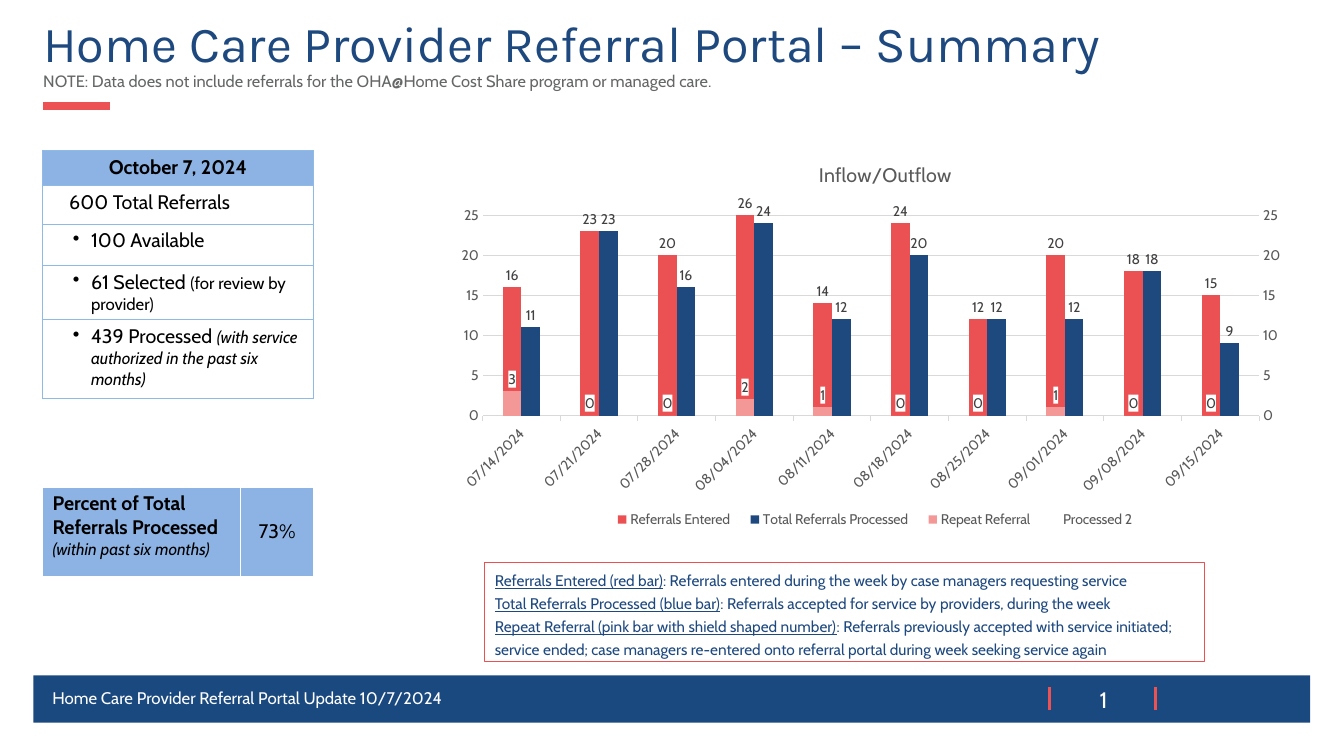
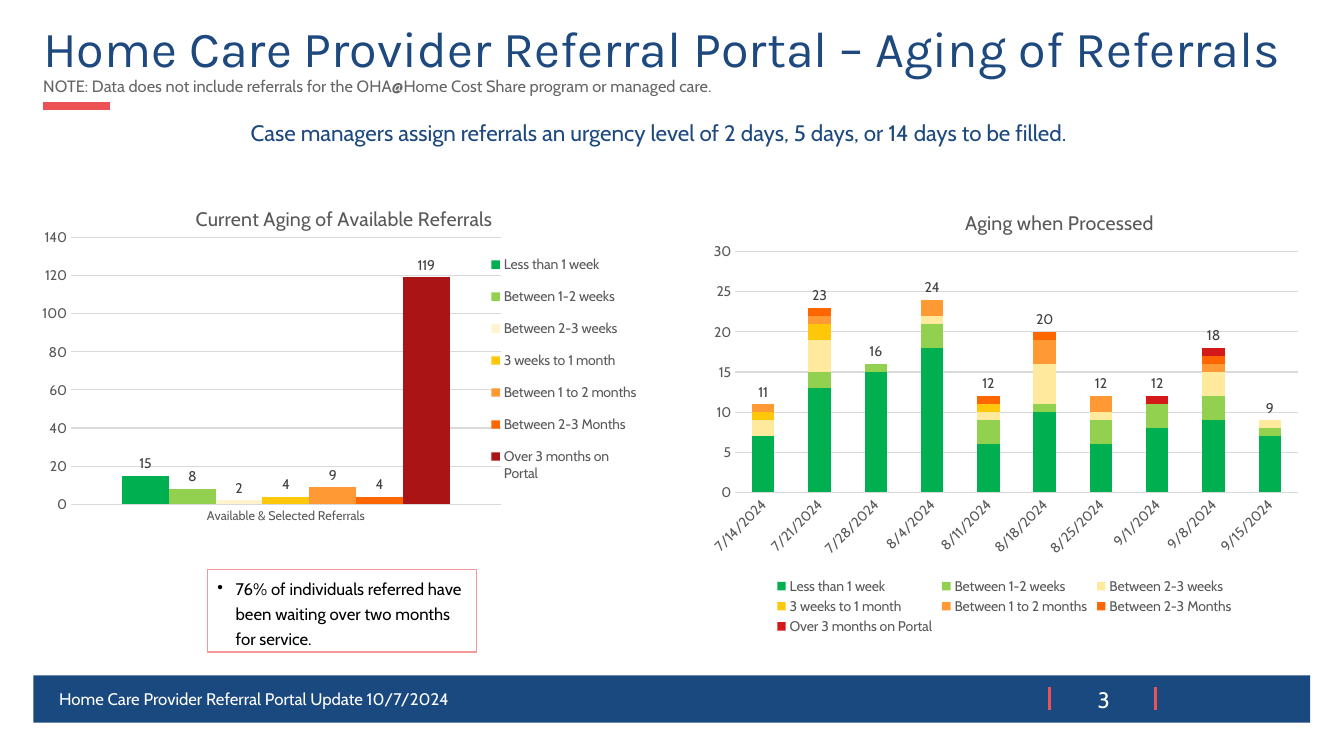
from copy import deepcopy
from dataclasses import dataclass, field

from lxml import etree
from pptx import Presentation
from pptx.chart.data import CategoryChartData
from pptx.dml.color import RGBColor
from pptx.enum.chart import XL_CHART_TYPE, XL_LABEL_POSITION, XL_LEGEND_POSITION, XL_TICK_MARK
from pptx.enum.shapes import MSO_CONNECTOR, MSO_SHAPE
from pptx.enum.text import MSO_ANCHOR, PP_ALIGN
from pptx.oxml import parse_xml
from pptx.oxml.ns import nsdecls, qn
from pptx.util import Cm, Pt

CLUSTERED, STACKED = XL_CHART_TYPE.COLUMN_CLUSTERED, XL_CHART_TYPE.COLUMN_STACKED
OUTSIDE, ABOVE = XL_LABEL_POSITION.OUTSIDE_END, XL_LABEL_POSITION.ABOVE
BOTTOM, RIGHT = XL_LEGEND_POSITION.BOTTOM, XL_LEGEND_POSITION.RIGHT
TICK_NONE, TICK_OUT = XL_TICK_MARK.NONE, XL_TICK_MARK.OUTSIDE
TOP, MIDDLE, LEFT, CENTER = MSO_ANCHOR.TOP, MSO_ANCHOR.MIDDLE, PP_ALIGN.LEFT, PP_ALIGN.CENTER
RECT, STRAIGHT = MSO_SHAPE.RECTANGLE, MSO_CONNECTOR.STRAIGHT

COLORS = {
    "navy": "1E497F", "band": "1A497F", "accent": "EC5153", "red": "EB5152", "pink": "F39797",
    "note": "656666", "axis": "595959", "label": "404040", "grid": "D9D9D9", "white": "FFFFFF",
    "black": "000000", "cell": "8DB3E4", "border": "8FBAE4", "green": "00B050", "lime": "92D050",
    "cream": "FFF4CE", "sand": "FFE99D", "gold": "FFC709", "amber": "FF9933", "orange": "FF6600",
    "maroon": "AA1415", "crimson": "D5181A",
}

# Text formats
TITLE = {"name": "Karla", "size": Pt(36), "color": "navy"}
NOTE = {"name": "Cabin", "size": Pt(11.7), "color": "note"}
PAGE = {"name": "Cabin", "size": Pt(16), "color": "white"}
FOOTER = PAGE | {"size": Pt(12)}
LEAD = PAGE | {"color": "navy"}
CELL = {"name": "Cabin", "size": Pt(14), "color": "black", "bold": False}
HEAD = CELL | {"bold": True}
SMALL = CELL | {"size": Pt(12)}
SMALL_ITALIC = SMALL | {"italic": True}
DEFINITION = LEAD | {"size": Pt(11)}
TERM = DEFINITION | {"underline": True}
AXIS = {"name": "Cabin", "size": Pt(10), "color": "axis"}
CHART_TITLE = AXIS | {"size": Pt(14), "bold": False}
LABEL = AXIS | {"color": "label"}
LOOSE = {"alignment": LEFT, "line_spacing": 1.23}
CENTERED = {"alignment": CENTER}


@dataclass
class Para:
    runs: list[tuple[str, dict]]
    fmt: dict = field(default_factory=dict)
    indent: float = 0
    bullet: float = 0


@dataclass
class Series:
    name: str
    values: list[int]
    color: str | None
    label: object = None
    label_fill: str | None = None


def xml(tag: str, inner: str, attrs: str = ""):
    return parse_xml(f'<{tag} {nsdecls("a", "c")} {attrs}>{inner}</{tag}>')


def solid(color: str) -> str:
    return f'<a:solidFill><a:srgbClr val="{COLORS[color]}"/></a:solidFill>'


def set_font(font, fmt: dict) -> None:
    for key, value in fmt.items():
        if key == "color":
            font.color.rgb = RGBColor.from_string(COLORS[value])
        else:
            setattr(font, key, value)


def set_fill(fill, color: str | None) -> None:
    if color is None:
        fill.background()
    else:
        fill.solid()
        fill.fore_color.rgb = RGBColor.from_string(COLORS[color])


def set_line(line, color: str, width: float) -> None:
    set_fill(line.fill, color)
    line.width = Pt(width)


def write(tf, paras: list[Para]) -> None:
    for i, para in enumerate(paras):
        p = tf.add_paragraph() if i else tf.paragraphs[0]
        pPr = p._p.get_or_add_pPr()
        pPr.set("marL", str(Cm(para.indent)))
        if para.bullet:
            pPr.set("indent", str(-Cm(para.bullet)))
            etree.SubElement(pPr, qn("a:buChar")).set("char", "•")
        for key, value in para.fmt.items():
            setattr(p, key, value)
        for text, fmt in para.runs:
            r = p.add_run()
            r.text = text
            set_font(r.font, fmt)


def add_rect(s, box: tuple, fill: str | None = None):
    sp = s.shapes.add_shape(RECT, *map(Cm, box))
    sp.shadow.inherit = False
    set_fill(sp.fill, fill)
    sp.line.fill.background()
    return sp


def add_text(s, box: tuple, paras: list[Para], anchor=TOP, outline: tuple | None = None) -> None:
    sp = add_rect(s, box) if outline else s.shapes.add_textbox(*map(Cm, box))
    if outline:
        set_line(sp.line, *outline)
    sp.text_frame.word_wrap = True
    sp.text_frame.vertical_anchor = anchor
    write(sp.text_frame, paras)


def add_rule(s, start: tuple, end: tuple, width: float) -> None:
    c = s.shapes.add_connector(STRAIGHT, *map(Cm, start + end))
    set_line(c.line, "accent", width)
    etree.SubElement(c._element.spPr, qn("a:effectLst"))


def add_frame(prs, title: str, title_top: float, page: str, footer_at: tuple):
    """Blank slide with the shared title, accent rule and footer band."""
    s = prs.slides.add_slide(prs.slide_layouts[6])
    add_rule(s, (1.09, 2.67), (2.77, 2.67), 6)
    add_rect(s, (0.84, 17.02, 32.18, 1.19), "band")
    for x in (26.44, 29.13):
        add_rule(s, (x, 17.32), (x, 17.88), 2.25)
    note = "NOTE: Data does not include referrals for the OHA@Home Cost Share program or managed care."
    add_text(s, (0.84, title_top, 32.18, 1.96),
             [Para([run], {"line_spacing": 0.9}) for run in ((title, TITLE), (note, NOTE))])
    add_text(s, (27, 17.15, 1.63, 0.94), [Para([(page, PAGE)], CENTERED)], MIDDLE)
    add_text(s, (*footer_at, 21.51, 1.02),
             [Para([("Home Care Provider Referral Portal Update 10/7/2024", FOOTER)])], MIDDLE)
    return s


def add_table(s, at: tuple, widths: list, heights: list, cells: list, border: tuple) -> None:
    """Each entry of cells is (paragraph, fill, anchor), in reading order."""
    size = (sum(widths), sum(heights))
    table = s.shapes.add_table(len(heights), len(widths), *map(Cm, at + size)).table
    table.first_row = table.horz_banding = False
    for column, width in zip(table.columns, widths):
        column.width = Cm(width)
    for row, height in zip(table.rows, heights):
        row.height = Cm(height)
    color, weight = border
    for cell, (para, fill, anchor) in zip(table.iter_cells(), cells):
        set_fill(cell.fill, fill)
        cell.vertical_anchor = anchor
        write(cell.text_frame, [para])
        for i, side in enumerate(("lnL", "lnR", "lnT", "lnB")):
            cell._tc.get_or_add_tcPr().insert(i, xml(f"a:{side}", solid(color), f'w="{Pt(weight)}"'))


# Chart parts that need XML
def place(parent, box: tuple, inner: str = "") -> None:
    for old in parent.findall(qn("c:layout")):
        parent.remove(old)
    values = "".join(f'<c:{key} val="{value}"/>' for key, value in zip("xywh", box))
    modes = '<c:xMode val="edge"/><c:yMode val="edge"/>'
    new = xml("c:layout", f"<c:manualLayout>{inner}{modes}{values}</c:manualLayout>")
    overlay = parent.find(qn("c:overlay"))
    parent.insert(0 if overlay is None else parent.index(overlay), new)


def plot_area(chart):
    return chart._chartSpace.find(f'.//{qn("c:plotArea")}')


def move_to_right_axis(chart, first: int) -> None:
    """Series from number first on go to a second axis pair."""
    area = plot_area(chart)
    bar = area.find(qn("c:barChart"))
    right = deepcopy(bar)
    for plot, unwanted in ((bar, slice(first, None)), (right, slice(first))):
        for ser in plot.findall(qn("c:ser"))[unwanted]:
            plot.remove(ser)
    bar.addnext(right)
    cat, val = (deepcopy(area.find(qn(tag))) for tag in ("c:catAx", "c:valAx"))
    ids = {ax.find(qn("c:axId")).get("val"): new for ax, new in ((cat, "5001"), (val, "5002"))}
    for part in (right, cat, val):
        for tag in ("c:axId", "c:crossAx"):
            for ref in part.findall(qn(tag)):
                ref.set("val", ids[ref.get("val")])
    val.remove(val.find(qn("c:majorGridlines")))
    for ax, tag, value in ((cat, "delete", "1"), (val, "axPos", "r"), (val, "crosses", "max")):
        ax.find(qn(f"c:{tag}")).set("val", value)
    area.find(qn("c:valAx")).addnext(val)
    val.addnext(cat)


def turn_into_line(chart, index: int) -> None:
    """One series becomes an unmarked line, left out of the legend."""
    bar = plot_area(chart).find(qn("c:barChart"))
    ser = bar.findall(qn("c:ser"))[index]
    for flag in ser.findall(qn("c:invertIfNegative")):
        ser.remove(flag)
    ser.find(qn("c:spPr")).addnext(xml("c:marker", '<c:symbol val="none"/>'))
    etree.SubElement(ser, qn("c:smooth")).set("val", "0")
    line = xml("c:lineChart", '<c:grouping val="standard"/><c:varyColors val="0"/><c:marker val="1"/>')
    line.insert(2, ser)
    line.extend([deepcopy(ref) for ref in bar.findall(qn("c:axId"))])
    bar.addnext(line)
    entry = xml("c:legendEntry", f'<c:idx val="{index}"/><c:delete val="1"/>')
    chart.legend._element.find(qn("c:legendPos")).addnext(entry)


def add_chart(s, kind, box: tuple, title: str, title_at: tuple, cats: list[str], series: list[Series],
              scale: tuple, plot_box: tuple, legend_at, legend_box: tuple, spacing: tuple = (219, 0),
              angle: int = -45, tick=TICK_NONE, cat_size: float = 10):
    data = CategoryChartData()
    data.categories = cats
    for item in series:
        data.add_series(item.name, item.values)
    chart = s.shapes.add_chart(kind, *map(Cm, box), data).chart
    set_font(chart.font, AXIS)
    # Title, legend and plot area
    chart.has_title = chart.has_legend = True
    write(chart.chart_title.text_frame, [Para([(title, CHART_TITLE)])])
    chart.legend.position, chart.legend.include_in_layout = legend_at, False
    set_font(chart.legend.font, AXIS)
    place(chart.chart_title._element, title_at)
    place(chart.legend._element, legend_box)
    place(plot_area(chart), plot_box, '<c:layoutTarget val="inner"/>')
    # Axes
    cat, val = chart.category_axis, chart.value_axis
    cat.major_tick_mark, val.major_tick_mark = tick, TICK_NONE
    set_font(cat.tick_labels.font, AXIS | {"size": Pt(cat_size)})
    set_font(val.tick_labels.font, AXIS)
    cat._element.find(f'.//{qn("a:bodyPr")}').set("rot", str(angle * 60000))
    val.minimum_scale, (val.maximum_scale, val.major_unit) = 0, scale
    val.format.line.fill.background()
    for line in (cat.format.line, val.major_gridlines.format.line):
        set_line(line, "grid", 0.75)
    # Series
    plot = chart.plots[0]
    plot.vary_by_categories = False
    plot.gap_width, plot.overlap = spacing
    for ser, item in zip(plot.series, series):
        set_fill(ser.format.fill, item.color)
        ser.format.line.fill.background()
        if item.label is not None:
            labels = ser.data_labels
            labels.show_value, labels.position = True, item.label
            set_font(labels.font, LABEL)
            if item.label_fill:
                labels._element.find(qn("c:txPr")).addprevious(xml("c:spPr", solid(item.label_fill)))
    return chart


PROCESSED = [11, 23, 16, 24, 12, 20, 12, 12, 18, 9]
WEEKS = [(7, 14), (7, 21), (7, 28), (8, 4), (8, 11), (8, 18), (8, 25), (9, 1), (9, 8), (9, 15)]
AGES = ["Less than 1 week", "Between 1-2 weeks", "Between 2-3 weeks", "3 weeks to 1 month",
        "Between 1 to 2 months", "Between 2-3 Months", "Over 3 months on Portal"]
DEFINITIONS = {
    "Referrals Entered (red bar)": "Referrals entered during the week by case managers requesting service",
    "Total Referrals Processed (blue bar)": "Referrals accepted for service by providers, during the week",
    "Repeat Referral (pink bar with shield shaped number)": "Referrals previously accepted with service "
    "initiated; service ended; case managers re-entered onto referral portal during week seeking service again"}
STATUS = [[("100 Available", CELL)], [("61 Selected ", CELL), ("(for review by provider)", SMALL)],
          [("439 Processed ", CELL), ("(with service authorized in the past six months)", SMALL_ITALIC)]]
PERCENT = [("Percent of Total Referrals Processed ", HEAD), ("(within past six months)", SMALL_ITALIC)]
WAITING = "76% of individuals referred have been waiting over two months for service."
URGENCY = "Case managers assign referrals an urgency level of 2 days, 5 days, or 14 days to be filled."
AGED = [[7, 13, 15, 18, 6, 10, 6, 8, 9, 7], [0, 2, 1, 3, 3, 1, 3, 3, 3, 1], [2, 4, 0, 1, 1, 5, 1, 0, 3, 1],
        [1, 2, 0, 0, 1, 0, 0, 0, 0, 0], [1, 1, 0, 2, 0, 3, 2, 0, 1, 0], [0, 1, 0, 0, 1, 1, 0, 0, 1, 0],
        [0, 0, 0, 0, 0, 0, 0, 1, 1, 0]]


def summary_slide(prs) -> None:
    s = add_frame(prs, "Home Care Provider Referral Portal – Summary", 0.36, "1", (1.07, 17.07))
    add_table(s, (1.07, 12.27), [5, 1.83], [2.26], [
        (Para(PERCENT), "cell", TOP), (Para([("73%", CELL)], CENTERED), "cell", MIDDLE)], ("white", 1))
    add_table(s, (1.07, 3.78), [6.83], [0.89, 0.97, 1.04, 1.37, 1.98], [
        (Para([("October 7, 2024", HEAD)], CENTERED), "cell", MIDDLE),
        (Para([("600 Total Referrals", CELL)], indent=0.42), None, TOP),
        *((Para(runs, indent=0.97, bullet=0.46), None, TOP) for runs in STATUS)], ("border", 0.5))
    add_text(s, (12.22, 14.17, 18.14, 2.51), [Para([(term, TERM), (f": {text}", DEFINITION)], LOOSE)
                                              for term, text in DEFINITIONS.items()], outline=("red", 0.75))
    chart = add_chart(
        s, CLUSTERED, (11.3, 3.78, 21.51, 9.7), "Inflow/Outflow", (0.43, 0.02),
        [f"{month:02}/{day:02}/2024" for month, day in WEEKS],
        [Series("Referrals Entered", [16, 23, 20, 26, 14, 24, 12, 20, 18, 15], "red", OUTSIDE),
         Series("Total Referrals Processed", PROCESSED, "navy", OUTSIDE),
         Series("Repeat Referral", [3, 0, 0, 2, 1, 0, 0, 1, 0, 0], "pink", OUTSIDE, "white"),
         Series("Processed 2", PROCESSED, None)],
        (25, 5), (0.04, 0.17, 0.91, 0.52), BOTTOM, (0.18, 0.93, 0.64, 0.06), tick=TICK_OUT)
    move_to_right_axis(chart, 2)


def aging_slide(prs) -> None:
    s = add_frame(prs, "Home Care Provider Referral Portal – Aging of Referrals", 0.48, "3", (1.24, 17.09))
    add_text(s, (5.23, 14.35, 6.78, 2.08), [Para([(WAITING, SMALL)], LOOSE, 0.46, 0.46)], outline=("pink", 1))
    add_text(s, (6.07, 2.72, 21.72, 1.02), [Para([(URGENCY, LEAD)], LOOSE)])
    shades = ["green", "lime", "cream", "gold", "amber", "orange", "maroon"]
    current = [[count] for count in (15, 8, 2, 4, 9, 4, 119)]
    add_chart(s, CLUSTERED, (1.02, 4.62, 15.27, 9.09), "Current Aging of Available Referrals", (0.25, 0.05),
              ["Available & Selected Referrals"],
              [Series(*parts, OUTSIDE) for parts in zip(AGES, current, shades)], (140, 20),
              (0.05, 0.15, 0.71, 0.74), RIGHT, (0.75, 0.16, 0.24, 0.71), angle=0, cat_size=9)
    shades[2], shades[6] = "sand", "crimson"
    chart = add_chart(s, STACKED, (17.6, 4.62, 15.42, 11.46), "Aging when Processed", (0.43, 0.05),
                      [f"{month}/{day}/2024" for month, day in WEEKS],
                      [*map(Series, AGES, AGED, shades), Series("Series 8", PROCESSED, None, ABOVE)], (30, 5),
                      (0.06, 0.15, 0.92, 0.53), BOTTOM, (0.12, 0.86, 0.76, 0.14), (150, 100))
    turn_into_line(chart, 7)


prs = Presentation()
prs.slide_width, prs.slide_height = Cm(33.87), Cm(19.05)
summary_slide(prs)
aging_slide(prs)
prs.save("out.pptx")
